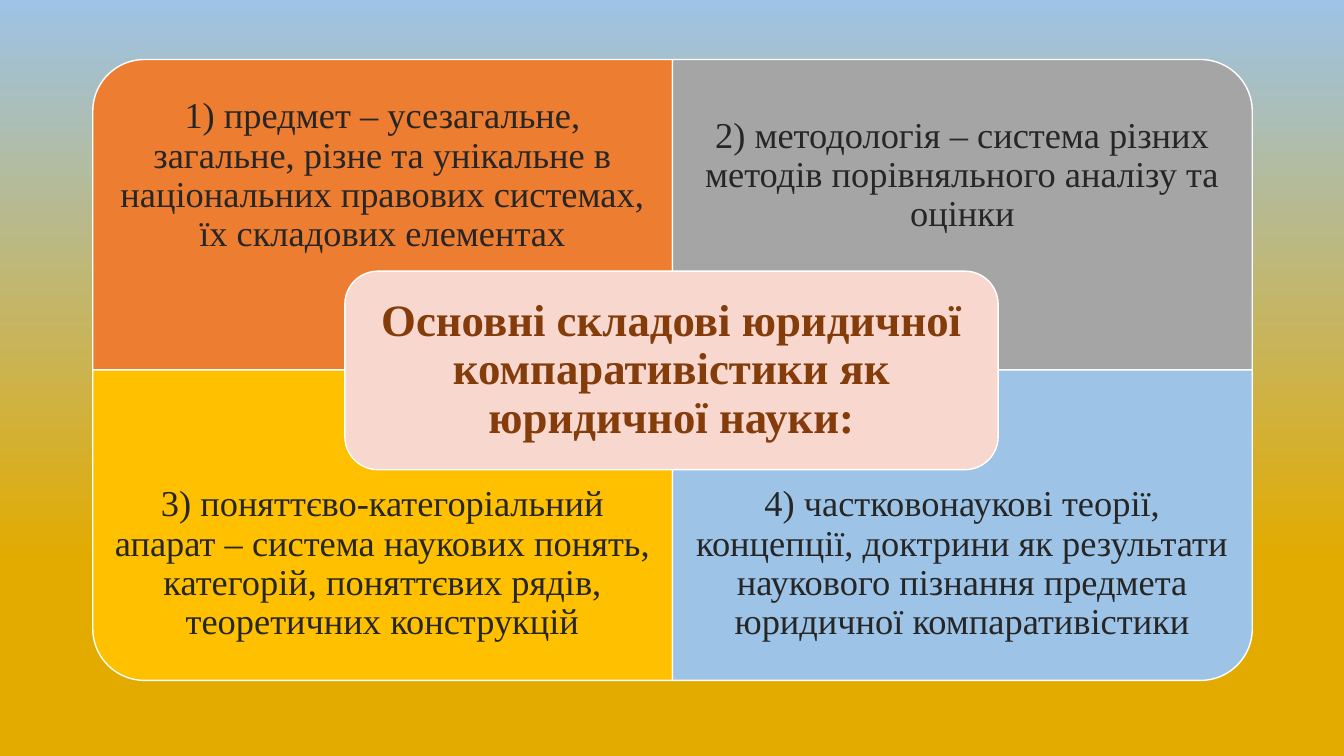
from pptx import Presentation
from pptx.dml.color import RGBColor
from pptx.enum.shapes import MSO_SHAPE as Kind
from pptx.enum.text import MSO_ANCHOR as Anchor, MSO_AUTO_SIZE as Fit, PP_ALIGN as Align
from pptx.util import Inches, Pt

# Content: text, fill, rotation that turns the round corner outwards
TITLE = "Основні складові юридичної компаративістики як юридичної науки:"
PARTS = [
    ("1) предмет – усезагальне, загальне, різне та унікальне в "
     "національних правових системах, їх складових елементах", "ED7D31", 270),
    ("2) методологія – система різних методів порівняльного аналізу "
     "та оцінки", "A5A5A5", 0),
    ("3) поняттєво-категоріальний апарат – система наукових понять, "
     "категорій, поняттєвих рядів, теоретичних конструкцій", "FFC000", 180),
    ("4) частковонаукові теорії, концепції, доктрини як результати "
     "наукового пізнання предмета юридичної компаративістики", "9DC3E6", 90),
]
FONT = "Times New Roman"

# Layout in inches
LEFT, TOP = 0.92, 0.59
WIDE, HIGH = 5.75, 3.08
TEXT_HIGH = HIGH * 0.75
HUB = (3.42, 2.69, 6.48, 1.97)
INSET = 0.095


def color(code):
    return RGBColor.from_string(code)


def add_panel(kind, box, fill, turn=0):
    panel = slide.shapes.add_shape(kind, *map(Inches, box))
    panel.rotation = turn
    panel.shadow.inherit = False
    panel.fill.solid()
    panel.fill.fore_color.rgb = color(fill)
    panel.line.color.rgb = color("FFFFFF")
    panel.line.width = Pt(1)


def set_text(shape, text, size, tint, pad, bold=False):
    frame = shape.text_frame
    frame.text = text
    frame.word_wrap = True
    frame.auto_size = Fit.NONE
    frame.vertical_anchor = Anchor.MIDDLE
    frame.margin_left = frame.margin_right = Inches(pad)
    frame.margin_top = frame.margin_bottom = Inches(pad)
    para = frame.paragraphs[0]
    para.alignment = Align.CENTER
    para.line_spacing = 0.9
    para.space_before = Pt(0)
    font = para.runs[0].font
    font.name, font.size, font.bold = FONT, Pt(size), bold
    font.color.rgb = color(tint)


deck = Presentation()
deck.slide_width, deck.slide_height = Inches(13.33), Inches(7.5)
slide = deck.slides.add_slide(deck.slide_layouts[5])

# Background: gold at the bottom, blue at the top
back = slide.background.fill
back.gradient()
back.gradient_angle = 90
for stop, (place, code) in zip(back.gradient_stops,
                               [(0.26, "E3AB00"), (1, "9DC3E6")]):
    stop.position = place
    stop.color.rgb = color(code)

# Four quarters, with text kept clear of the hub
for i, (text, fill, turn) in enumerate(PARTS):
    row, col = divmod(i, 2)
    x, y = LEFT + col * WIDE, TOP + row * HIGH
    w, h = (HIGH, WIDE) if turn % 180 else (WIDE, HIGH)
    box = (x + (WIDE - w) / 2, y + (HIGH - h) / 2, w, h)
    add_panel(Kind.ROUND_1_RECTANGLE, box, fill, turn)
    label = slide.shapes.add_textbox(
        Inches(x), Inches(y + row * (HIGH - TEXT_HIGH)),
        Inches(WIDE), Inches(TEXT_HIGH))
    set_text(label, text, 26, "262626", 0.2)

# Hub with the title on top
add_panel(Kind.ROUNDED_RECTANGLE, HUB, "F8D7CE")
title = slide.shapes.title
x, y, w, h = HUB
title.left, title.top = Inches(x + INSET), Inches(y + INSET)
title.width, title.height = Inches(w - 2 * INSET), Inches(h - 2 * INSET)
set_text(title, TITLE, 32, "843C0B", 0.13, True)
slide.shapes._spTree.append(title._element)

deck.save("out.pptx")
